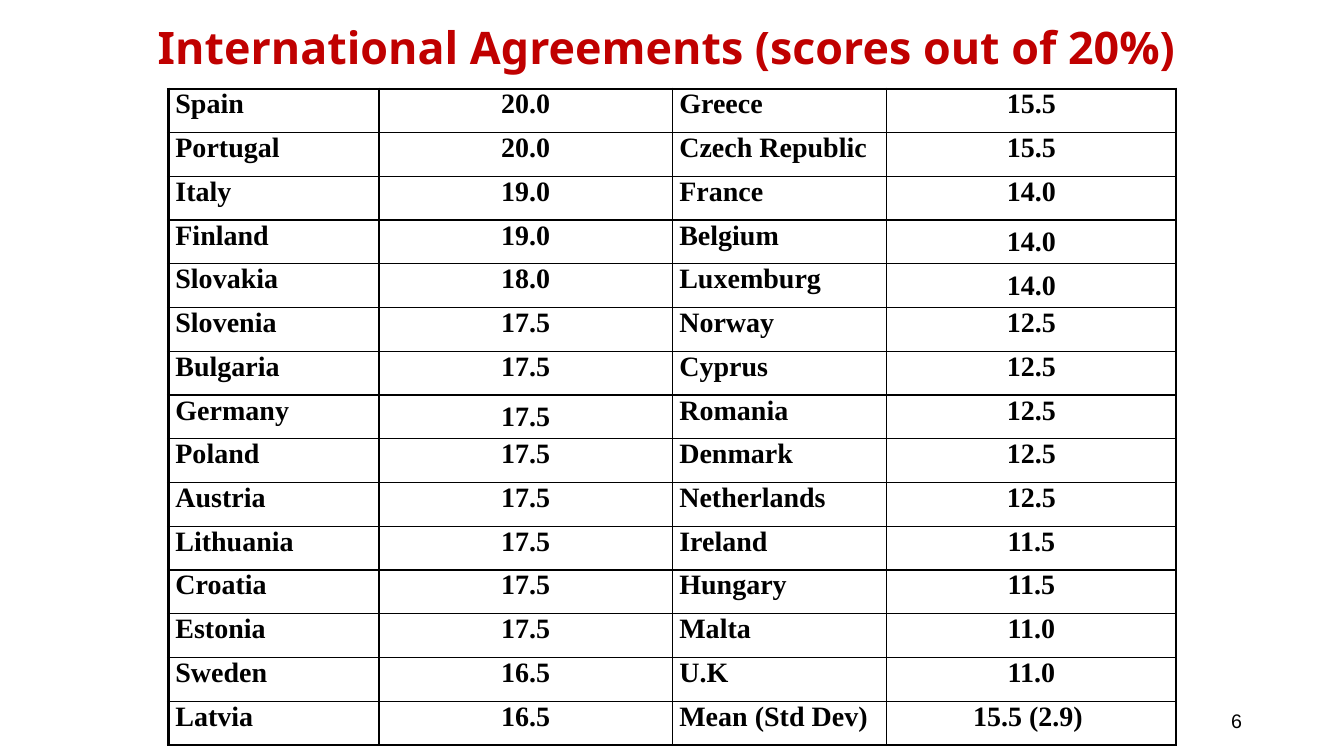
from lxml.etree import SubElement
from pptx import Presentation
from pptx.dml.color import RGBColor
from pptx.enum.text import MSO_ANCHOR as Anchor, MSO_AUTO_SIZE as AutoSize, PP_ALIGN as Align
from pptx.oxml.ns import qn
from pptx.util import Cm, Pt

BLACK, RED = "000000", "C00000"
THIN, THICK = 1, 2.25

SCORES = [
    ("Spain", "20.0", "Greece", "15.5"),
    ("Portugal", "20.0", "Czech Republic", "15.5"),
    ("Italy", "19.0", "France", "14.0"),
    ("Finland", "19.0", "Belgium", "14.0"),
    ("Slovakia", "18.0", "Luxemburg", "14.0"),
    ("Slovenia", "17.5", "Norway", "12.5"),
    ("Bulgaria", "17.5", "Cyprus", "12.5"),
    ("Germany", "17.5", "Romania", "12.5"),
    ("Poland", "17.5", "Denmark", "12.5"),
    ("Austria", "17.5", "Netherlands", "12.5"),
    ("Lithuania", "17.5", "Ireland", "11.5"),
    ("Croatia", "17.5", "Hungary", "11.5"),
    ("Estonia", "17.5", "Malta", "11.0"),
    ("Sweden", "16.5", "U.K", "11.0"),
    ("Latvia", "16.5", "Mean (Std Dev)", "15.5 (2.9) "),
]
COLUMN_WIDTHS = (5.31, 7.39, 5.41, 7.29)
MIDDLE_CELLS = {(3, 3), (4, 3), (7, 1)}


def color(value):
    return RGBColor.from_string(value)


def write(frame, text, font, size, tint, bold, align):
    """Put one formatted paragraph in a text frame."""
    frame.text = text
    para = frame.paragraphs[0]
    para.alignment = align
    for span in para.runs:
        span.font.name = font
        span.font.size = Pt(size)
        span.font.bold = bold
        span.font.color.rgb = color(tint)


def place(box, left, top, width, height):
    box.left, box.top, box.width, box.height = map(Cm, (left, top, width, height))


def set_borders(cell, widths):
    """Draw the left, right, top and bottom borders, in points."""
    properties = cell._tc.get_or_add_tcPr()
    for side, width in zip("LRTB", widths):
        line = SubElement(properties, qn(f"a:ln{side}"), w=str(Pt(width)))
        fill = SubElement(line, qn("a:solidFill"))
        SubElement(fill, qn("a:srgbClr"), val=BLACK)


def add_title(page, text):
    title = page.shapes.title
    place(title, 2.06, 0, 29.49, 2.39)
    frame = title.text_frame
    frame.auto_size = AutoSize.NONE
    frame.vertical_anchor = Anchor.TOP
    frame.margin_left = frame.margin_right = Cm(0.5)
    frame.margin_top = frame.margin_bottom = Cm(0.5)
    write(frame, text, "Noto Sans", 32, RED, True, Align.CENTER)


def add_score_table(page, rows):
    last_row, last_column = len(rows) - 1, len(COLUMN_WIDTHS) - 1
    height = Cm(16.53)
    table = page.shapes.add_table(len(rows), len(COLUMN_WIDTHS), Cm(4.24), Cm(2.24),
                                  Cm(sum(COLUMN_WIDTHS)), height).table
    table.first_row = table.horz_banding = False
    for column, width in zip(table.columns, COLUMN_WIDTHS):
        column.width = Cm(width)

    for r, values in enumerate(rows):
        table.rows[r].height = height // len(rows)
        for c, value in enumerate(values):
            cell = table.cell(r, c)
            # Thick outer frame, thin inner grid
            edges = (c == 0, c == last_column, r == 0, r == last_row)
            set_borders(cell, [THICK if edge else THIN for edge in edges])
            cell.fill.background()
            cell.margin_left = cell.margin_right = Cm(0.18)
            cell.margin_top = cell.margin_bottom = 0
            cell.vertical_anchor = Anchor.MIDDLE if (r, c) in MIDDLE_CELLS else Anchor.TOP
            # Countries to the left, scores centred
            align = Align.CENTER if c % 2 else Align.LEFT
            write(cell.text_frame, value, "Times New Roman", 20, BLACK, True, align)


def add_page_number(page, number):
    box = page.shapes.add_textbox(Cm(23.93), Cm(17.65), Cm(7.62), Cm(1.02))
    box.text_frame.word_wrap = True
    box.text_frame.vertical_anchor = Anchor.MIDDLE
    write(box.text_frame, number, "Arial", 14, BLACK, False, Align.RIGHT)


def main():
    deck = Presentation()
    deck.slide_width, deck.slide_height = Cm(33.87), Cm(19.05)
    page = deck.slides.add_slide(deck.slide_layouts[5])
    add_title(page, "International Agreements (scores out of 20%)")
    add_score_table(page, SCORES)
    add_page_number(page, "6")
    deck.save("out.pptx")


if __name__ == "__main__":
    main()
